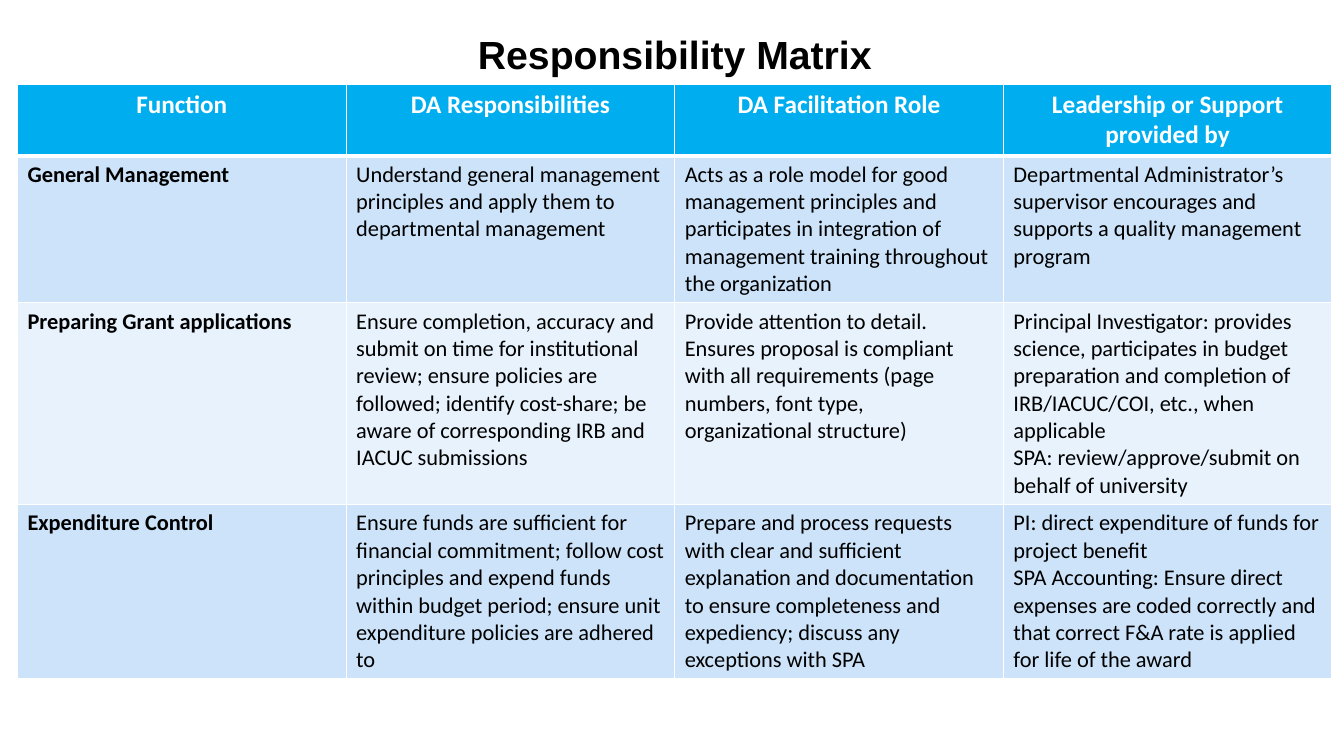
from lxml.etree import SubElement
from pptx import Presentation
from pptx.dml.color import RGBColor
from pptx.enum.text import MSO_ANCHOR, PP_ALIGN
from pptx.oxml.ns import qn
from pptx.util import Pt


def color(value):
    return RGBColor.from_string(value)


def add_border(cell, side, width):
    line = SubElement(cell._tc.get_or_add_tcPr(), qn(f"a:ln{side}"), w=str(Pt(width)))
    fill = SubElement(line, qn("a:solidFill"))
    SubElement(fill, qn("a:srgbClr"), val="FFFFFF")


deck = Presentation()
deck.slide_width, deck.slide_height = Pt(960), Pt(540)
page = deck.slides.add_slide(deck.slide_layouts[6])

# Responsibility table
matrix = [
    ["Function", "DA Responsibilities", "DA Facilitation Role",
     "Leadership or Support provided by"],
    ["General Management",
     "Understand general management principles and apply them to departmental management",
     "Acts as a role model for good management principles and participates in "
     "integration of management training throughout the organization",
     "Departmental Administrator’s supervisor encourages and supports a quality "
     "management program"],
    ["Preparing Grant applications",
     "Ensure completion, accuracy and submit on time for institutional review; ensure "
     "policies are followed; identify cost-share; be aware of corresponding IRB and "
     "IACUC submissions",
     "Provide attention to detail. Ensures proposal is compliant with all requirements "
     "(page numbers, font type, organizational structure)",
     "Principal Investigator: provides science, participates in budget preparation and "
     "completion of IRB/IACUC/COI, etc., when applicable\n"
     "SPA: review/approve/submit on behalf of university"],
    ["Expenditure Control",
     "Ensure funds are sufficient for financial commitment; follow cost principles and "
     "expend funds within budget period; ensure unit expenditure policies are adhered to",
     "Prepare and process requests with clear and sufficient explanation and "
     "documentation to ensure completeness and expediency; discuss any exceptions with SPA",
     "PI: direct expenditure of funds for project benefit\n"
     "SPA Accounting: Ensure direct expenses are coded correctly and that correct F&A "
     "rate is applied for life of the award"],
]
row_heights = [51, 105, 144, 124]
row_fills = ["00AEEF", "CCE3F9", "E7F2FC", "CCE3F9"]

table = page.shapes.add_table(
    len(matrix), len(matrix[0]), Pt(12.5), Pt(60), Pt(939), Pt(sum(row_heights))).table
for column in table.columns:
    column.width = Pt(234.75)

for r, texts in enumerate(matrix):
    table.rows[r].height = Pt(row_heights[r])
    is_header = r == 0
    for c, text in enumerate(texts):
        cell = table.cell(r, c)
        cell.text_frame.text = text
        for para in cell.text_frame.paragraphs:
            para.alignment = PP_ALIGN.CENTER if is_header else PP_ALIGN.LEFT
            for span in para.runs:
                span.font.name = "Calibri"
                span.font.size = Pt(18 if is_header else 16)
                span.font.bold = is_header or c == 0
                span.font.color.rgb = color("FFFFFF" if is_header else "000000")
        # Borders come before the fill in a cell's properties
        for side in "LRTB":
            thick = (r, side) in [(0, "B"), (1, "T")]
            add_border(cell, side, 3 if thick else 1)
        cell.fill.solid()
        cell.fill.fore_color.rgb = color(row_fills[r])

# Title
title = page.shapes.add_textbox(Pt(311), Pt(18), Pt(342), Pt(41))
frame = title.text_frame
frame.word_wrap = True
frame.vertical_anchor = MSO_ANCHOR.TOP
frame.text = "Responsibility Matrix"
para = frame.paragraphs[0]
para.alignment = PP_ALIGN.CENTER
font = para.runs[0].font
font.name, font.size, font.bold = "Arial", Pt(28), True
font.color.rgb = color("000000")

deck.save("out.pptx")
